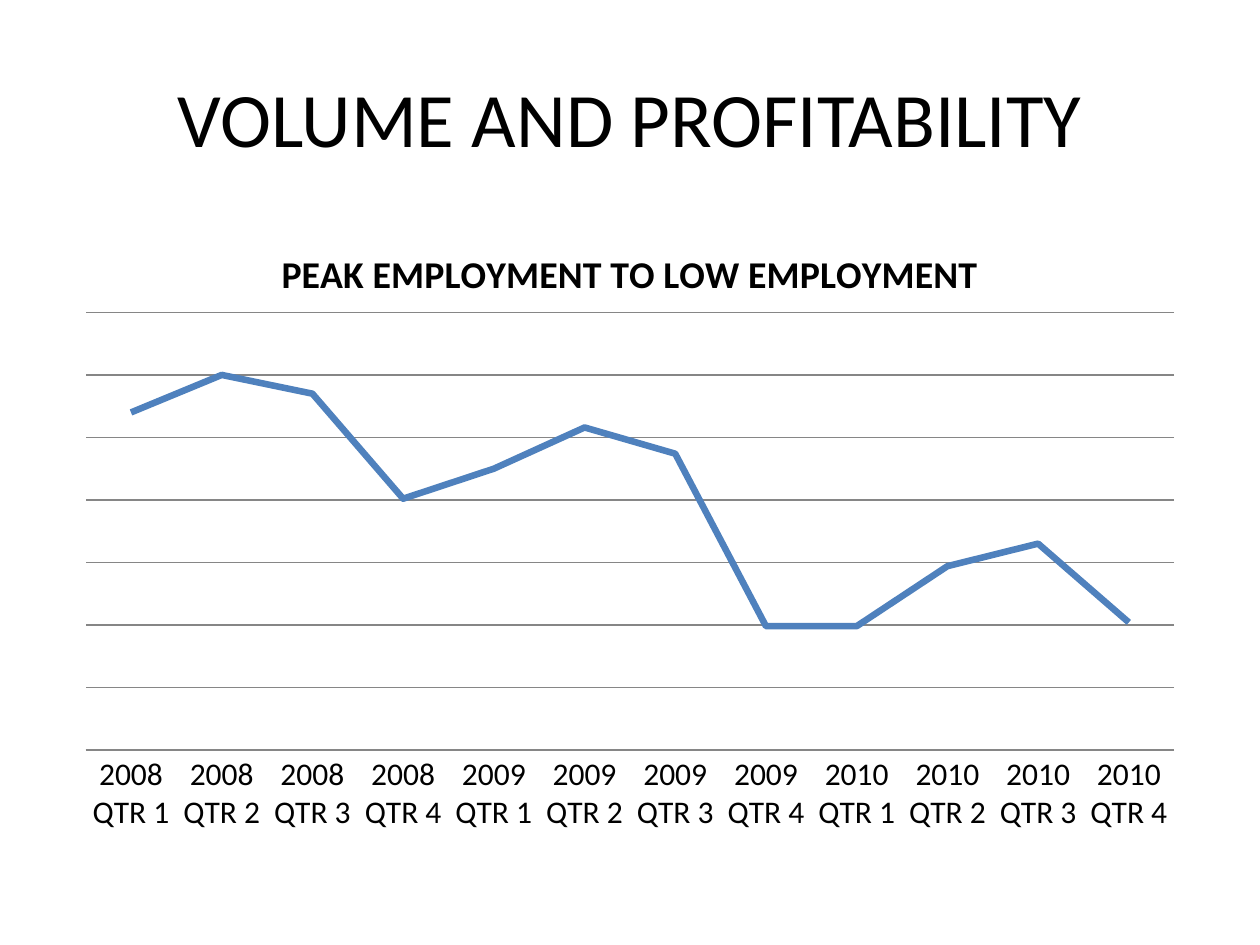
from lxml.etree import SubElement
from pptx import Presentation
from pptx.chart.data import CategoryChartData
from pptx.dml.color import RGBColor
from pptx.enum.chart import XL_CHART_TYPE as ChartType
from pptx.enum.chart import XL_MARKER_STYLE as Marker
from pptx.enum.chart import XL_TICK_MARK as TickMark
from pptx.enum.text import MSO_ANCHOR as Anchor
from pptx.enum.text import PP_ALIGN as Align
from pptx.oxml.ns import qn
from pptx.util import Cm, Pt

BLACK = RGBColor(0x00, 0x00, 0x00)
BLUE = RGBColor(0x4F, 0x81, 0xBD)
GREY = RGBColor(0x86, 0x86, 0x86)
FONT = "Calibri"
LEFT, WIDTH = Cm(1.27), Cm(22.86)
QUARTERS = [f"{year} QTR {quarter}" for year in (2008, 2009, 2010) for quarter in range(1, 5)]
EMPLOYMENT = (90, 100, 95, 67, 75, 86, 79, 33, 33, 49, 55, 34)


def style_font(font, size, bold=False, color=BLACK):
    font.name = FONT
    font.size = Pt(size)
    font.bold = bold
    font.color.rgb = color


def write_text(frame, text, align=Align.CENTER, **style):
    paragraph = frame.paragraphs[0]
    paragraph.alignment = align
    run = paragraph.add_run()
    run.text = text
    style_font(run.font, **style)


def add_heading(slide, text):
    heading = slide.shapes.add_textbox(LEFT, Cm(0.76), WIDTH, Cm(3.18)).text_frame
    heading.word_wrap = True
    heading.vertical_anchor = Anchor.MIDDLE
    write_text(heading, text, size=44)


def style_line(line, color, width):
    line.color.rgb = color
    line.width = Pt(width)


def place_plot(chart, **fractions):
    plot_area = chart._chartSpace.chart.plotArea
    layout = plot_area.find(qn("c:layout"))
    if layout is None:
        layout = plot_area.makeelement(qn("c:layout"))
        plot_area.insert(0, layout)
    manual = SubElement(layout, qn("c:manualLayout"))
    settings = {"layoutTarget": "inner", "xMode": "edge", "yMode": "edge", **fractions}
    for name, value in settings.items():
        SubElement(manual, qn(f"c:{name}")).set("val", str(value))


def style_axes(chart):
    quarters = chart.category_axis
    quarters.major_tick_mark = TickMark.NONE
    quarters.minor_tick_mark = TickMark.NONE
    style_line(quarters.format.line, GREY, 0.75)
    style_font(quarters.tick_labels.font, 18)
    level = chart.value_axis
    level.visible = False
    level.minimum_scale = 0
    level.maximum_scale = 116.7
    level.major_unit = 16.67
    level.has_major_gridlines = True
    style_line(level.major_gridlines.format.line, GREY, 0.75)


def add_employment_chart(slide, title):
    data = CategoryChartData()
    data.categories = QUARTERS
    data.add_series("Series 1", EMPLOYMENT)
    chart = slide.shapes.add_chart(
        ChartType.LINE_STACKED, LEFT, Cm(4.45), WIDTH, Cm(12.57), data
    ).chart
    style_font(chart.font, 18)
    chart.has_legend = False
    chart.has_title = True
    write_text(chart.chart_title.text_frame, title, size=21.6, bold=True)
    chart.chart_title.include_in_layout = False
    style_axes(chart)
    place_plot(chart, x=0.02, y=0.147, w=0.96, h=0.702)
    plot = chart.plots[0]
    plot.vary_by_categories = False
    employment = plot.series[0]
    employment.smooth = False
    employment.marker.style = Marker.NONE
    style_line(employment.format.line, BLUE, 3.75)


def main():
    deck = Presentation()
    deck.slide_width, deck.slide_height = Cm(25.4), Cm(19.05)
    slide = deck.slides.add_slide(deck.slide_layouts[6])
    add_heading(slide, "VOLUME AND PROFITABILITY")
    add_employment_chart(slide, "PEAK EMPLOYMENT TO LOW EMPLOYMENT")
    deck.save("out.pptx")


if __name__ == "__main__":
    main()
